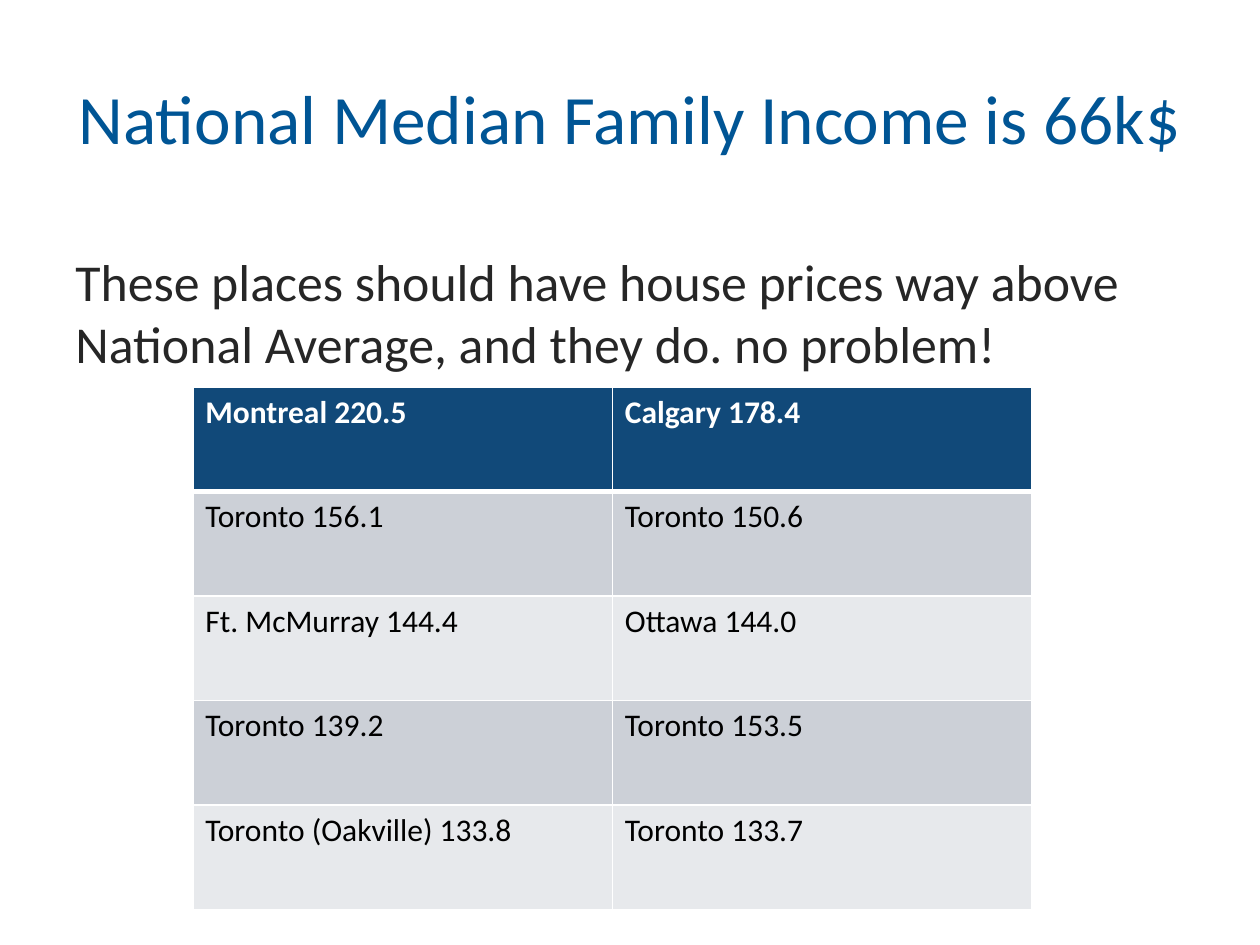
"""Build a slide comparing family income with city house prices."""
from dataclasses import dataclass

import pptx
import pptx.dml.color
import pptx.enum.text
import pptx.oxml
import pptx.oxml.ns
import pptx.util

Inches = pptx.util.Inches
Pt = pptx.util.Pt
RGBColor = pptx.dml.color.RGBColor
PP_ALIGN = pptx.enum.text.PP_ALIGN
MSO_ANCHOR = pptx.enum.text.MSO_ANCHOR

FONT = "Calibri"
TITLE_BLUE = RGBColor(0x00, 0x55, 0x95)
BODY_GREY = RGBColor(0x26, 0x26, 0x26)
HEADER_BLUE = RGBColor(0x11, 0x49, 0x79)
BAND_DARK = RGBColor(0xCC, 0xD0, 0xD7)
BAND_LIGHT = RGBColor(0xE7, 0xE9, 0xEC)
WHITE = RGBColor(0xFF, 0xFF, 0xFF)
BLACK = RGBColor(0x00, 0x00, 0x00)

CITY_ROWS = [
    ("Montreal 220.5", "Calgary 178.4"),
    ("Toronto 156.1", "Toronto 150.6"),
    ("Ft. McMurray 144.4", "Ottawa 144.0"),
    ("Toronto 139.2", "Toronto 153.5"),
    ("Toronto (Oakville) 133.8", "Toronto 133.7"),
]


@dataclass
class TextStyle:
    size: float
    color: RGBColor
    bold: bool = False


@dataclass
class TextBlock:
    text: str
    top: float
    height: float
    style: TextStyle
    align: PP_ALIGN = PP_ALIGN.LEFT
    anchor: MSO_ANCHOR = MSO_ANCHOR.TOP


BLOCKS = [
    TextBlock("National Median Family Income is 66k$", 0.3, 1.25,
              TextStyle(39.6, TITLE_BLUE), PP_ALIGN.CENTER, MSO_ANCHOR.MIDDLE),
    TextBlock("These places should have house prices way above "
              "National Average, and they do. no problem!", 1.93, 1.14,
              TextStyle(29.6, BODY_GREY)),
]


def set_text(tf: pptx.text.text.TextFrame, text: str, style: TextStyle) -> None:
    """Write one styled paragraph."""
    tf.text = text
    font = tf.paragraphs[0].runs[0].font
    font.name = FONT
    font.size = Pt(style.size)
    font.bold = style.bold
    font.color.rgb = style.color


def add_block(slide: pptx.slide.Slide, block: TextBlock) -> None:
    """Add a full-width text box."""
    sp = slide.shapes.add_textbox(Inches(0.5), Inches(block.top),
                                  Inches(9), Inches(block.height))
    tf = sp.text_frame
    tf.word_wrap = True
    tf.vertical_anchor = block.anchor
    set_text(tf, block.text, block.style)
    tf.paragraphs[0].alignment = block.align


def set_border(cell: pptx.table._Cell, side: str, width: float) -> None:
    """Give one side of a cell a white line."""
    tc_pr = cell._tc.get_or_add_tcPr()
    tc_pr.append(pptx.oxml.parse_xml(
        f'<a:ln{side} {pptx.oxml.ns.nsdecls("a")} w="{Pt(width)}">'
        f'<a:solidFill><a:srgbClr val="{WHITE}"/></a:solidFill></a:ln{side}>'))


def add_city_table(slide: pptx.slide.Slide) -> None:
    """Add the banded table of cities."""
    table = slide.shapes.add_table(
        len(CITY_ROWS), 2, Inches(1.53), Inches(3.07),
        Inches(6.66), Inches(4.15)).table
    for row, texts in enumerate(CITY_ROWS):
        header = row == 0
        fill = HEADER_BLUE if header else BAND_DARK if row % 2 else BAND_LIGHT
        style = TextStyle(18, WHITE if header else BLACK, header)
        for col, text in enumerate(texts):
            cell = table.cell(row, col)
            for side in "LRTB":
                heavy = (row, side) in ((0, "B"), (1, "T"))
                set_border(cell, side, 3 if heavy else 1)
            cell.fill.solid()
            cell.fill.fore_color.rgb = fill
            set_text(cell.text_frame, text, style)


def main() -> None:
    """Build and save the slide."""
    prs = pptx.Presentation()
    prs.slide_width, prs.slide_height = Inches(10), Inches(7.5)
    s = prs.slides.add_slide(prs.slide_layouts[6])
    for block in BLOCKS:
        add_block(s, block)
    add_city_table(s)
    prs.save("out.pptx")


if __name__ == "__main__":
    main()
